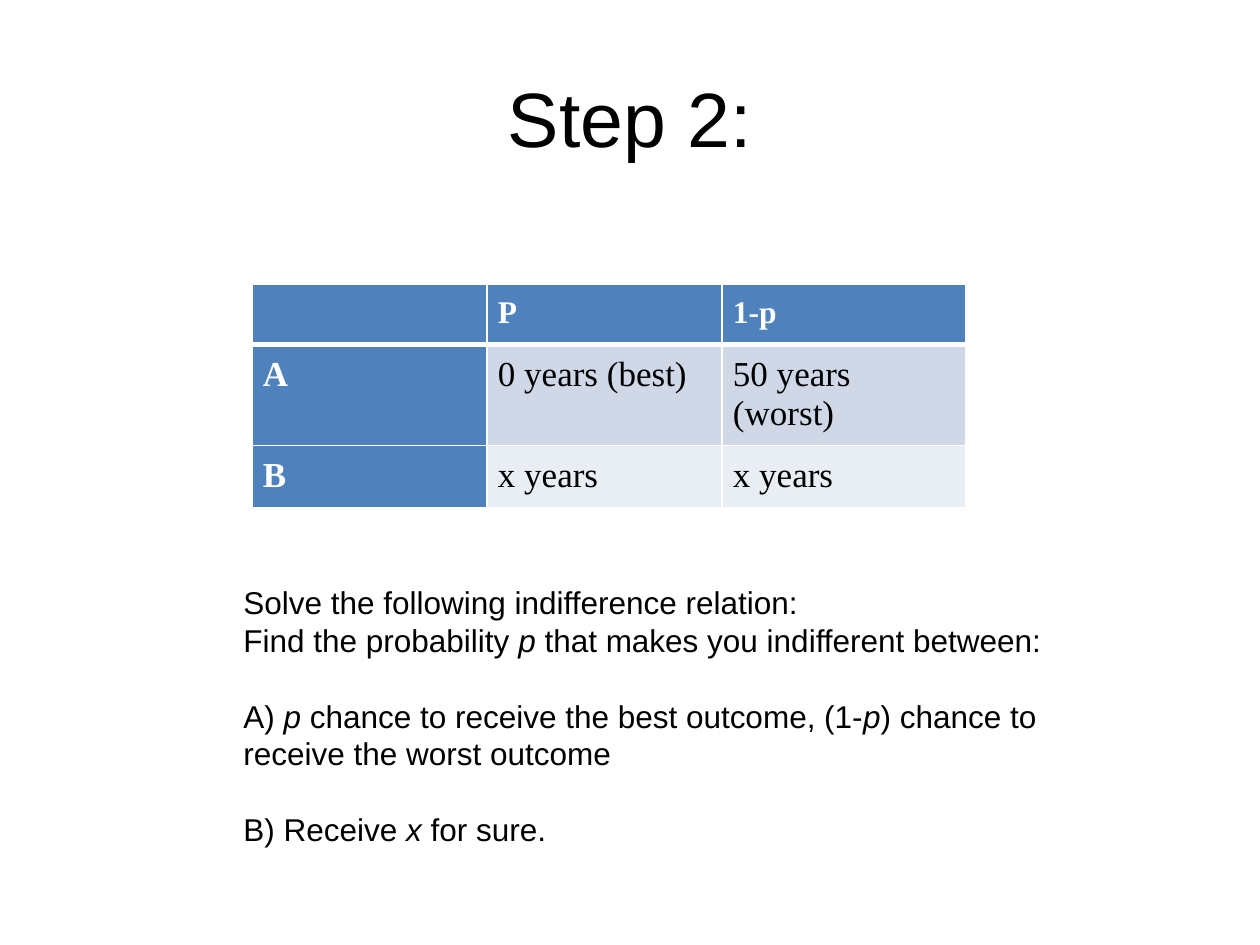
import pptx
import pptx.util
import pptx.dml.color
import pptx.enum.text
import pptx.oxml

PX = 914400 / 126
COLORS = {
    "text": "000000",
    "white": "FFFFFF",
    "header": "4F81BD",
    "band_dark": "D0D8E8",
    "band_light": "E9EDF4",
}


def px(length):
    return pptx.util.Emu(round(length * PX))


def write(para, text, size=18, font="Arial", color="text", bold=False):
    for index, part in enumerate(text.split("*")):
        if part:
            span = para.add_run()
            span.text = part
            span.font.size = pptx.util.Pt(size)
            span.font.name = font
            span.font.bold = bold
            span.font.italic = index % 2 == 1
            span.font.color.rgb = pptx.dml.color.RGBColor.from_string(COLORS[color])


deck = pptx.Presentation()
deck.slide_width, deck.slide_height = px(1260), px(945)
page = deck.slides.add_slide(deck.slide_layouts[5])

title = page.shapes.title
title.left, title.top, title.width, title.height = px(63), px(38), px(1134), px(157)
title.text_frame.vertical_anchor = pptx.enum.text.MSO_ANCHOR.MIDDLE
title_para = title.text_frame.paragraphs[0]
title_para.alignment = pptx.enum.text.PP_ALIGN.CENTER
write(title_para, "Step 2:", size=44)

rows = [
    ["", "P", "1-p"],
    ["A", "0 years (best)", "50 years (worst)"],
    ["B", "x years", "x years"],
]
row_heights = [58, 101, 62]
column_widths = [235, 235, 244]
bands = ["header", "band_dark", "band_light"]
table = page.shapes.add_table(
    3, 3, px(252), px(284), px(sum(column_widths)), px(sum(row_heights))
).table
for column, width in zip(table.columns, column_widths):
    column.width = px(width)
for row, height in zip(table.rows, row_heights):
    row.height = px(height)

for r, labels in enumerate(rows):
    for c, label in enumerate(labels):
        cell = table.cell(r, c)
        heading = r == 0 or c == 0
        cell.margin_left = cell.margin_right = px(11)
        cell.margin_top = cell.margin_bottom = px(11)
        write(
            cell.text_frame.paragraphs[0],
            label,
            size=18 if r == 0 else 20,
            font="Times New Roman",
            color="white" if heading else "text",
            bold=heading,
        )
        properties = cell._tc.get_or_add_tcPr()
        for side in "LRTB":
            thick = (r == 0 and side == "B") or (r == 1 and side == "T")
            properties.append(pptx.oxml.parse_xml(
                f'<a:ln{side} xmlns:a="http://schemas.openxmlformats.org/drawingml/2006/main" '
                f'w="{pptx.util.Pt(3 if thick else 1)}"><a:solidFill>'
                f'<a:srgbClr val="{COLORS["white"]}"/></a:solidFill></a:ln{side}>'
            ))
        cell.fill.solid()
        fill = COLORS["header" if heading else bands[r]]
        cell.fill.fore_color.rgb = pptx.dml.color.RGBColor.from_string(fill)

lines = [
    ("Solve the following indifference relation:", 0),
    ("Find the probability *p* that makes you indifferent between:", 0),
    ("A) *p* chance to receive the best outcome, (1-*p*) chance to", 1),
    ("receive the worst outcome", 0),
    ("B) Receive *x* for sure.", 1),
]
line_pitch = pptx.util.Pt(21.6)
box = page.shapes.add_textbox(px(231), px(577), px(835), px(318))
frame = box.text_frame
frame.word_wrap = False
frame.vertical_anchor = pptx.enum.text.MSO_ANCHOR.TOP
for index, (line, gap) in enumerate(lines):
    para = frame.add_paragraph() if index else frame.paragraphs[0]
    para.line_spacing = line_pitch
    para.space_before = pptx.util.Emu(gap * line_pitch)
    write(para, line)

deck.save("out.pptx")
